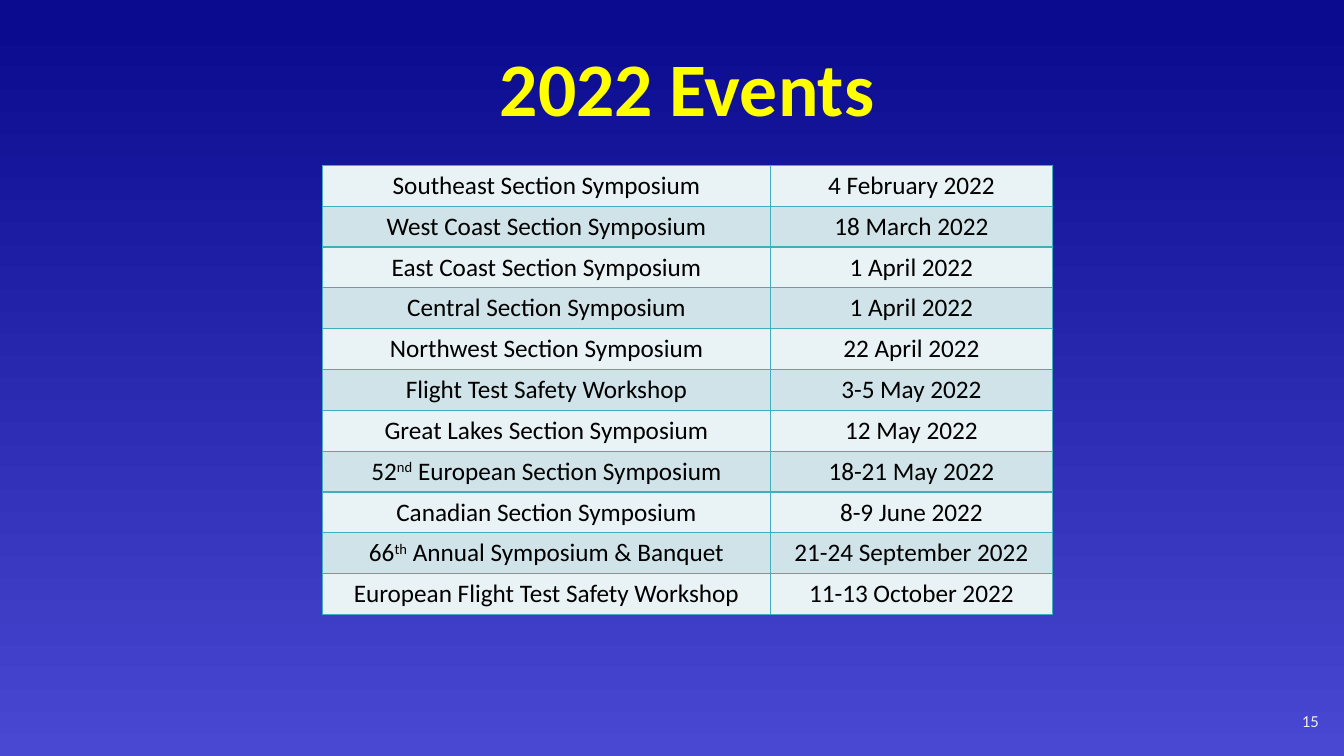
"""Build the 2022 events slide: a title, a table of dates and a page number."""
from lxml import etree
from pptx import Presentation
from pptx.dml.color import RGBColor
from pptx.enum import text
from pptx.oxml import ns
from pptx.util import Inches, Pt

BLUE_BOTTOM = RGBColor(0x48, 0x48, 0xD2)
BLUE_TOP = RGBColor(0x0B, 0x0B, 0x8F)
YELLOW = RGBColor(0xFF, 0xFF, 0x00)
BLACK = RGBColor(0x00, 0x00, 0x00)
PALE_GREY = RGBColor(0xED, 0xED, 0xED)
TEAL = RGBColor(0x41, 0xAE, 0xBD)
BANDS = [RGBColor(0xE9, 0xF2, 0xF4), RGBColor(0xCF, 0xE3, 0xE8)]

EVENTS = [
    ("Southeast Section Symposium", "4 February 2022"),
    ("West Coast Section Symposium", "18 March 2022"),
    ("East Coast Section Symposium", "1 April 2022"),
    ("Central Section Symposium", "1 April 2022"),
    ("Northwest Section Symposium", "22 April 2022"),
    ("Flight Test Safety Workshop", "3-5 May 2022"),
    ("Great Lakes Section Symposium", "12 May 2022"),
    ("52^nd^ European Section Symposium", "18-21 May 2022"),
    ("Canadian Section Symposium", "8-9 June 2022"),
    ("66^th^ Annual Symposium & Banquet", "21-24 September 2022"),
    ("European Flight Test Safety Workshop", "11-13 October 2022"),
]


def write(frame, words, size, color, align, bold=False):
    """Fill a text frame, raising the parts of the words set between carets."""
    frame.word_wrap = True
    frame.vertical_anchor = text.MSO_ANCHOR.MIDDLE
    paragraph = frame.paragraphs[0]
    paragraph.alignment = align
    for index, part in enumerate(words.split("^")):
        run = paragraph.add_run()
        run.text = part
        run.font.name = "Calibri"
        run.font.size = Pt(size)
        run.font.bold = bold
        run.font.color.rgb = color
        if index % 2:
            run._r.get_or_add_rPr().set("baseline", "30000")
    return paragraph


def outline(tag, width, color):
    """Return a solid line element of the given tag."""
    line = etree.Element(ns.qn(tag), w=str(Pt(width)))
    fill = etree.SubElement(line, ns.qn("a:solidFill"))
    etree.SubElement(fill, ns.qn("a:srgbClr"), val=str(color))
    return line


prs = Presentation()
prs.slide_width = Inches(13.33)
prs.slide_height = Inches(7.5)
slide = prs.slides.add_slide(prs.slide_layouts[6])

backdrop = slide.background.fill
backdrop.gradient()
backdrop.gradient_angle = 90
for stop, color, position in zip(backdrop.gradient_stops, (BLUE_BOTTOM, BLUE_TOP), (0, 0.97)):
    stop.color.rgb = color
    stop.position = position

page_number = slide.shapes.add_textbox(Inches(10.18), Inches(6.95), Inches(3), Inches(0.4))
write(page_number.text_frame, "15", 12, PALE_GREY, text.PP_ALIGN.RIGHT)

title = slide.shapes.add_textbox(Inches(1.22), Inches(0.19), Inches(11.19), Inches(1.45))
heading = write(title.text_frame, "2022 Events", 54, YELLOW, text.PP_ALIGN.CENTER, bold=True)
heading.line_spacing = 0.9
heading.runs[0]._r.get_or_add_rPr().insert(0, outline("a:ln", 0.75, BLACK))

schedule = slide.shapes.add_table(
    len(EVENTS), 2, Inches(3.2), Inches(1.64), Inches(7.24), Inches(4.46)).table
schedule.first_row = False
schedule.horz_banding = False
for column, width in zip(schedule.columns, (4.44, 2.8)):
    column.width = Inches(width)
for row, event in enumerate(EVENTS):
    for col, words in enumerate(event):
        cell = schedule.cell(row, col)
        for edge in ("a:lnL", "a:lnR", "a:lnT", "a:lnB"):
            cell._tc.get_or_add_tcPr().append(outline(edge, 1, TEAL))
        cell.fill.solid()
        cell.fill.fore_color.rgb = BANDS[row % 2]
        cell.vertical_anchor = text.MSO_ANCHOR.MIDDLE
        write(cell.text_frame, words, 18, BLACK, text.PP_ALIGN.CENTER)

prs.save("out.pptx")
